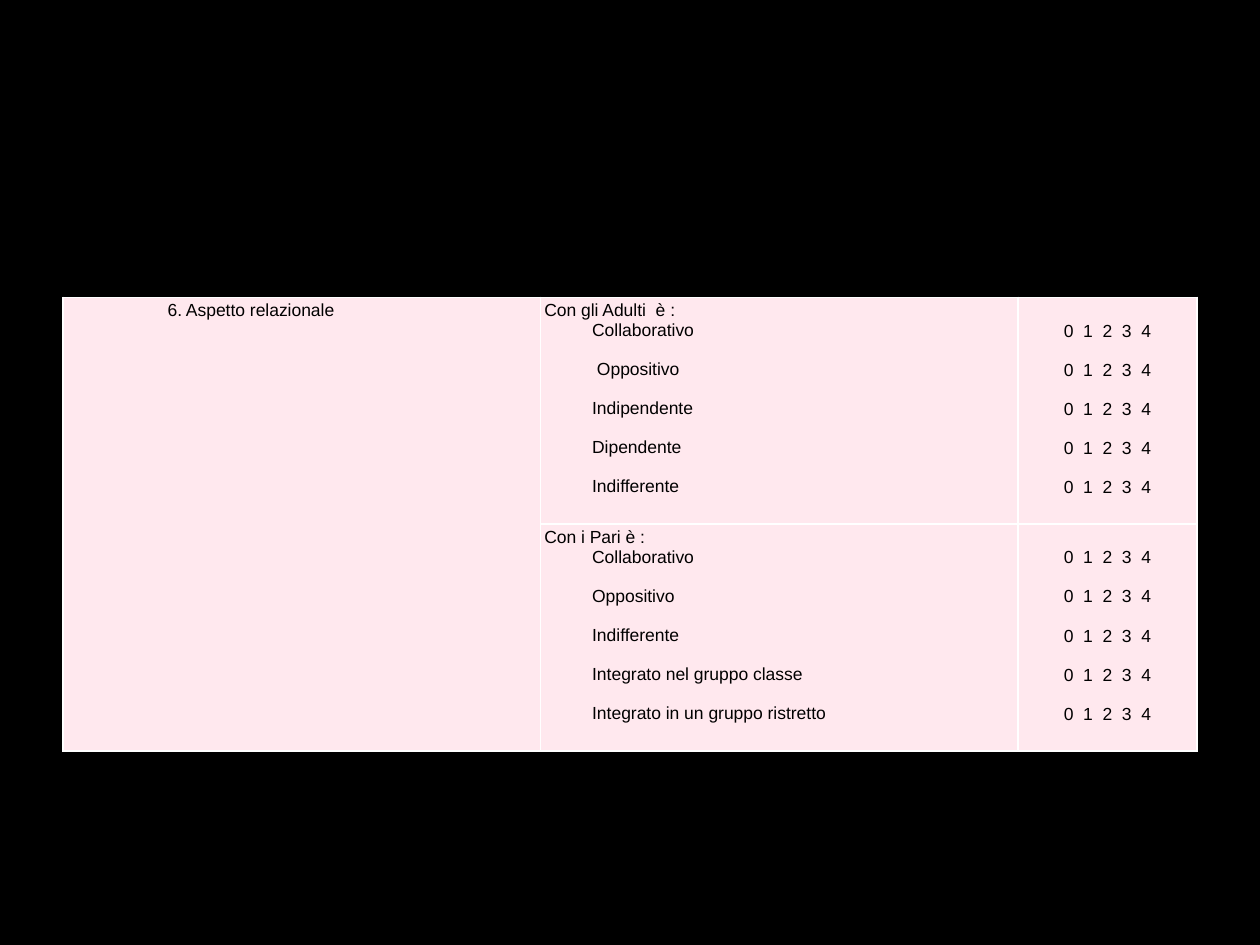
from dataclasses import dataclass

from lxml import etree
from pptx import Presentation
from pptx.dml.color import RGBColor
from pptx.enum.text import PP_ALIGN
from pptx.oxml.ns import qn
from pptx.table import Table, _Cell
from pptx.util import Inches, Pt

LEFT, CENTER = PP_ALIGN.LEFT, PP_ALIGN.CENTER
COLORS = {"background": "000000", "cell": "FFE8EE", "border": "FFFFFF", "text": "000000"}
COLUMN_WIDTHS = (3.79, 3.79, 1.42)
ROW_HEIGHT = 1.8
INSET = 0.03
SCORE_TOP = 0.19  # starts the scores one line lower, beside the first item
TITLE_LEFT = 0.83
LINE = Pt(11.2)  # height of one text line
INDENT = Inches(0.38)
BULLET_FONT, BULLET = "Wingdings", "·"  # the clock symbol of this symbol font
SCORES = "0  1  2  3  4"


@dataclass
class Section:
    heading: str
    items: tuple[str, ...]


SECTIONS = (
    Section("Con gli Adulti  è :",
            ("Collaborativo", " Oppositivo", "Indipendente", "Dipendente", "Indifferente")),
    Section("Con i Pari è :",
            ("Collaborativo", "Oppositivo", "Indifferente",
             "Integrato nel gruppo classe", "Integrato in un gruppo ristretto")),
)


def style_cell(cell: _Cell) -> None:
    """Give a cell its fill, insets and white borders."""
    cell.fill.solid()
    cell.fill.fore_color.rgb = RGBColor.from_string(COLORS["cell"])
    for side in ("left", "right", "top", "bottom"):
        setattr(cell, f"margin_{side}", Inches(INSET))
    properties = cell._tc.get_or_add_tcPr()
    for position, edge in enumerate(("a:lnL", "a:lnR", "a:lnT", "a:lnB")):
        line = etree.Element(qn(edge), w=str(Pt(1)))
        fill = etree.SubElement(line, qn("a:solidFill"))
        etree.SubElement(fill, qn("a:srgbClr"), val=COLORS["border"])
        properties.insert(position, line)


def write_line(cell: _Cell, text: str, alignment: PP_ALIGN = LEFT,
               gap: bool = False, bullet: bool = False) -> None:
    """Write the next line of a cell, using its first paragraph while empty."""
    frame = cell.text_frame
    paragraph = frame.add_paragraph() if frame.text else frame.paragraphs[0]
    formats = {"alignment": alignment, "space_before": LINE if gap else Pt(0)}
    for name, value in formats.items():
        setattr(paragraph, name, value)
    if bullet:
        properties = paragraph._p.get_or_add_pPr()
        properties.set("marL", str(INDENT))
        properties.set("indent", str(-INDENT))
        etree.SubElement(properties, qn("a:buFont"), typeface=BULLET_FONT,
                         pitchFamily="2", charset="2")
        etree.SubElement(properties, qn("a:buChar"), char=BULLET)
    run = paragraph.add_run()
    run.text = text
    for name, value in {"name": "Arial", "size": Pt(10)}.items():
        setattr(run.font, name, value)
    run.font.color.rgb = RGBColor.from_string(COLORS["text"])


def fill_section(table: Table, row: int, section: Section) -> None:
    """Write a heading, its bulleted items and the score beside each item."""
    item_cell, score_cell = table.cell(row, 1), table.cell(row, 2)
    score_cell.margin_top = Inches(SCORE_TOP)
    write_line(item_cell, section.heading)
    for index, item in enumerate(section.items):
        write_line(item_cell, item, gap=index > 0, bullet=True)
        write_line(score_cell, SCORES, CENTER, gap=index > 0)


def main() -> None:
    presentation = Presentation()
    presentation.slide_width, presentation.slide_height = Inches(10), Inches(7.5)
    slide = presentation.slides.add_slide(presentation.slide_layouts[6])
    slide.background.fill.solid()
    slide.background.fill.fore_color.rgb = RGBColor.from_string(COLORS["background"])

    # Table grid
    row_count = len(SECTIONS)
    table = slide.shapes.add_table(
        row_count, len(COLUMN_WIDTHS), Inches(0.5), Inches(2.36),
        Inches(sum(COLUMN_WIDTHS)), Inches(ROW_HEIGHT * row_count)).table
    table.first_row = table.horz_banding = False
    for column, width in zip(table.columns, COLUMN_WIDTHS):
        column.width = Inches(width)
    for row in table.rows:
        row.height = Inches(ROW_HEIGHT)
    for cell in table.iter_cells():
        style_cell(cell)

    # Area name, spanning all sections
    area_cell = table.cell(0, 0)
    area_cell.merge(table.cell(row_count - 1, 0))
    area_cell.margin_left = Inches(TITLE_LEFT)
    write_line(area_cell, "6. Aspetto relazionale")

    # Sections with scores
    for row_index, section in enumerate(SECTIONS):
        fill_section(table, row_index, section)

    presentation.save("out.pptx")


if __name__ == "__main__":
    main()
